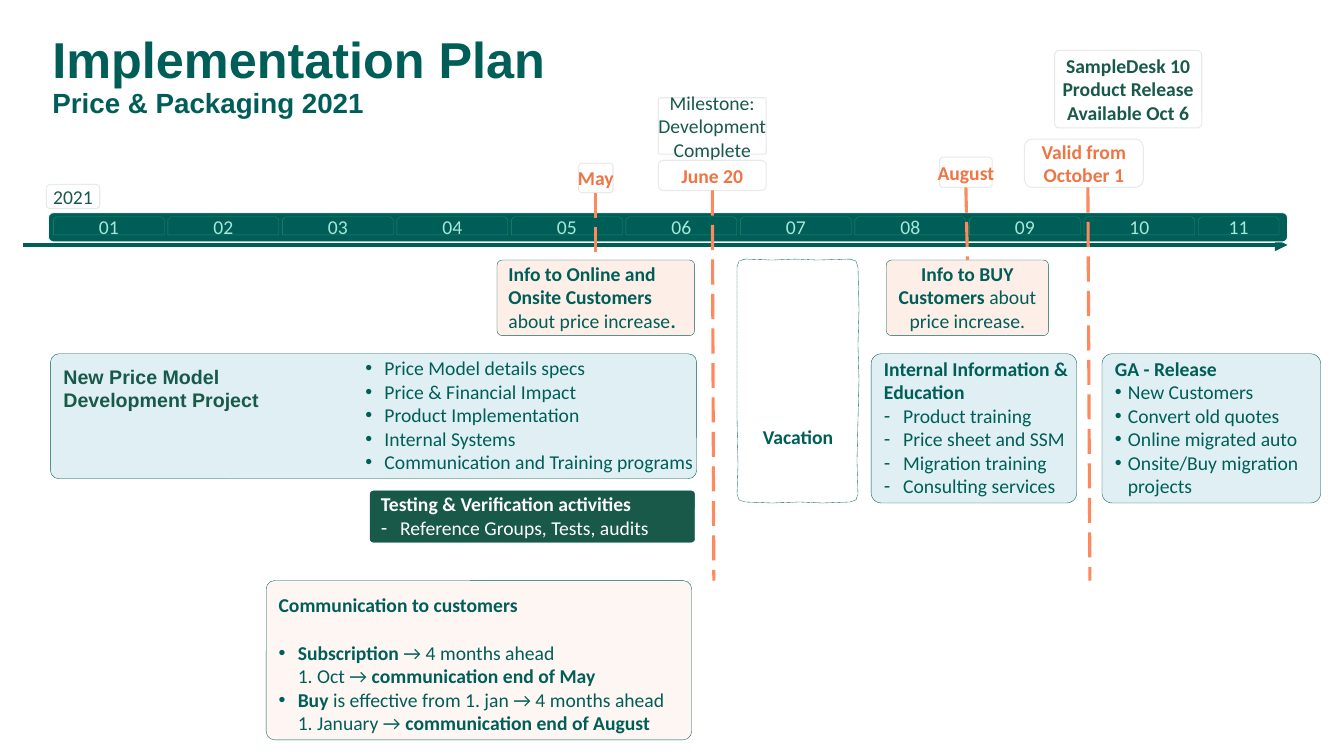
from lxml.etree import SubElement
from pptx import Presentation
from pptx.dml.color import RGBColor
from pptx.enum.dml import MSO_LINE as Dash
from pptx.enum.shapes import MSO_CONNECTOR as Link, MSO_SHAPE as Kind
from pptx.enum.text import MSO_ANCHOR as Anchor, MSO_AUTO_SIZE as Fit, PP_ALIGN as Align
from pptx.oxml.ns import qn
from pptx.util import Inches, Pt

TEAL = RGBColor(0x00, 0x5E, 0x58)
GREEN = RGBColor(0x18, 0x59, 0x4A)
MINT = RGBColor(0xA6, 0xE7, 0xD7)
EDGE = RGBColor(0x24, 0x86, 0x6E)
PALE = RGBColor(0xF1, 0xF7, 0xF5)
GREY = RGBColor(0xEA, 0xE9, 0xE9)
WHITE = RGBColor(0xFF, 0xFF, 0xFF)
BLUE = RGBColor(0xA6, 0xD3, 0xDD)
PEACH = RGBColor(0xFE, 0xD0, 0xBF)
CREAM = RGBColor(0xFE, 0xE8, 0xDF)
CORAL = RGBColor(0xFC, 0x8A, 0x5E)
ORANGE = RGBColor(0xEF, 0x75, 0x45)


def style(shape, fill, line, width, alpha=None):
    shape.shadow.inherit = False
    if fill is None:
        shape.fill.background()
    else:
        shape.fill.solid()
        shape.fill.fore_color.rgb = fill
    if alpha:
        color = shape.fill._xPr.find(qn("a:solidFill"))[0]
        SubElement(color, qn("a:alpha"), val=str(alpha * 1000))
    shape.line.color.rgb = line
    shape.line.width = Pt(width)


def bullet(para, mark, left, hang):
    props = para._p.get_or_add_pPr()
    props.set("marL", str(Inches(left)))
    props.set("indent", str(-Inches(hang)))
    SubElement(props, qn("a:buFont"), typeface="Arial")
    SubElement(props, qn("a:buChar"), char=mark)


def write(frame, items, color, bold=False, align=Align.LEFT, inset=(0, 0, 0, 0),
          wrap=True, anchor=Anchor.MIDDLE, indent=(0.19, 0.19), font="Calibri"):
    """Fill a frame; a leading mark makes a bullet, ** toggles bold."""
    frame.word_wrap = wrap
    frame.vertical_anchor = anchor
    (frame.margin_left, frame.margin_top,
     frame.margin_right, frame.margin_bottom) = map(Inches, inset)
    for num, item in enumerate(items):
        para = frame.add_paragraph() if num else frame.paragraphs[0]
        para.alignment = align
        if item[:2] in ("• ", "- "):
            bullet(para, item[0], *indent)
            item = item[2:]
        parts = item.split("**")
        para.font.name, para.font.size = font, Pt(14)
        para.font.color.rgb = color
        whole = len(parts) == 3 and not parts[0] and not parts[2]
        if len(parts) == 1 or whole:
            para.font.bold = bold or whole
        for odd, part in enumerate(parts):
            for row, text in enumerate(part.split("\n")):
                if row:
                    para.add_line_break()
                if text:
                    run = para.add_run()
                    run.text = text
                    if len(parts) > 1 and not whole:
                        run.font.bold = odd % 2 == 1


def block(slide, box, kind=Kind.ROUNDED_RECTANGLE, curve=None):
    shape = slide.shapes.add_shape(kind, *map(Inches, box))
    if curve is not None:
        shape.adjustments[0] = curve
    return shape


def label(slide, box, items, color, bold=False, curve=None):
    shape = block(slide, box, curve=curve)
    style(shape, None, GREY, 0.75)
    write(shape.text_frame, items, color, bold, Align.CENTER, wrap=False)
    return shape


def panel(slide, box, items, fill, alpha=35, color=TEAL, curve=0.068,
          inset=(0.1, 0, 0, 0), **text):
    shape = block(slide, box, curve=curve)
    style(shape, fill, TEAL, 0.25, alpha)
    write(shape.text_frame, items, color, inset=inset, anchor=Anchor.TOP, **text)
    return shape


def rule(slide, start, end, color, width):
    line = slide.shapes.add_connector(Link.STRAIGHT, *map(Inches, start + end))
    line.line.color.rgb = color
    line.line.width = Pt(width)
    SubElement(line._element.spPr, qn("a:effectLst"))
    return line


def marker(slide, start, end, top=None, foot=None):
    line = rule(slide, start, end, CORAL, 2.25)
    line.line.dash_style = Dash.LONG_DASH
    if top is not None:
        line.begin_connect(top, 2)
    if foot is not None:
        line.end_connect(foot, 0)


def heading(slide, box):
    title = slide.shapes.title
    title.left, title.top, title.width, title.height = map(Inches, box)
    frame = title.text_frame
    frame.auto_size = Fit.NONE
    frame.vertical_anchor = Anchor.MIDDLE
    para = frame.paragraphs[0]
    para.alignment, para.line_spacing = Align.LEFT, 0.9
    para.font.name, para.font.bold = "Arial", True
    para.font.color.rgb = TEAL
    for text, size in (("Implementation Plan", 36), ("Price & Packaging 2021", 19.8)):
        if para.runs:
            para.add_line_break()
        run = para.add_run()
        run.text = text
        run.font.size = Pt(size)


def timeline(slide, box):
    left, top, width, height = box
    axis = rule(slide, (0.23, top + 0.32), (left + width, top + 0.32), TEAL, 3)
    SubElement(axis.line._get_or_add_ln(), qn("a:tailEnd"), type="triangle")
    style(block(slide, box), TEAL, PALE, 0.75)
    step = (10.75 - 0.53) / 9
    for month in range(11):
        wide = 0.8 if month == 10 else 1.1
        cell = block(slide, (left + 0.05 + month * step, top + 0.04, wide, 0.18),
                     Kind.SNIP_2_SAME_RECTANGLE)
        style(cell, TEAL, EDGE, 0.25)
        write(cell.text_frame, [f"{month + 1:02}"], MINT, align=Align.CENTER, wrap=False)
    label(slide, (left - 0.02, top - 0.28, 0.53, 0.24), ["2021"], GREEN)


def vacation(slide, box):
    """Draw the slightly uneven, dashed holiday frame."""
    left, top, width, height = box
    edge = [(0, 0.08), (0.02, 0.02), (0.08, 0), (0.35, 0.01), (0.58, 0), (0.8, 0.01),
            (1.12, 0), (1.18, 0.02), (1.2, 0.08), (1.21, 0.5), (1.2, 0.85),
            (1.21, 1.2), (1.2, 1.6), (1.19, 2), (1.2, 2.33), (1.18, 2.39),
            (1.12, 2.41), (0.85, 2.42), (0.62, 2.41), (0.35, 2.42), (0.08, 2.41),
            (0.02, 2.39), (0, 2.33), (0.01, 2.05), (0, 1.58), (0, 0.83)]
    spots = [(Inches(left + x), Inches(top + y)) for x, y in edge]
    maker = slide.shapes.build_freeform(*spots[0])
    maker.add_line_segments(spots[1:], close=True)
    shape = maker.convert_to_shape()
    style(shape, WHITE, TEAL, 0.25)
    shape.line.dash_style = Dash.SQUARE_DOT
    write(shape.text_frame, ["Vacation"], TEAL, True, Align.CENTER,
          (0.1, 1.65, 0.1, 0), anchor=Anchor.TOP)


def project(slide, box):
    left, top, width, height = box
    panel(slide, box, [
        "• Price Model details specs", "• Price & Financial Impact",
        "• Product Implementation", "• Internal Systems",
        "• Communication and Training programs"], BLUE, indent=(3.19, 0.19))
    note = slide.shapes.add_textbox(*map(Inches, (left + 0.03, top + 0.06, 2.59, 0.57)))
    write(note.text_frame, ["New Price Model", "Development Project"], GREEN, True,
          inset=(0.1, 0.05, 0.1, 0.05), anchor=Anchor.TOP, font="Arial")
    panel(slide, (left + 3.17, top + 1.36, 3.22, 0.51), [
        "**Testing & Verification activities**",
        "- Reference Groups, Tests, audits"], GREEN, None, WHITE)


def release(slide, top):
    panel(slide, (8.64, top, 2.04, 1.48), [
        "**Internal Information &**", "**Education**", "- Product training",
        "- Price sheet and SSM", "- Migration training", "- Consulting services"], BLUE)
    panel(slide, (10.93, top, 2.17, 1.48), [
        "**GA - Release**", "• New Customers", "• Convert old quotes",
        "• Online migrated auto", "• Onsite/Buy migration\nprojects"],
        BLUE, indent=(0.13, 0.13))


def notice(slide, box):
    shape = panel(slide, box, [
        "**Communication to customers**",
        "• **Subscription** → 4 months ahead\n1. Oct → **communication end of May**",
        "• **Buy** is effective from 1. jan → 4 months ahead\n"
        "1. January → **communication end of August**"],
        CREAM, curve=0.053, inset=(0.1, 0.1, 0, 0.1))
    shape.text_frame.paragraphs[0].space_after = Pt(17)


def dates(slide, top, foot):
    """Place the dated labels, customer notices and markers."""
    online = panel(slide, (4.93, top, 1.96, 0.75), [
        "**Info to Online and Onsite Customers**\nabout price increase**.**"],
        PEACH, inset=(0.1, 0, 0.1, 0))
    buyers = panel(slide, (8.79, top, 1.61, 0.75), [
        "**Info to BUY Customers** about price increase."],
        PEACH, inset=(0.1, 0, 0.1, 0), align=Align.CENTER)
    label(slide, (6.53, 0.97, 1.07, 0.56), ["Milestone:\nDevelopment", "Complete"],
          GREEN, curve=0.034)
    label(slide, (10.46, 0.5, 1.46, 0.77),
          ["SampleDesk 10", "Product Release", "Available Oct 6"], GREEN, True, 0.059)
    may = label(slide, (5.74, 1.62, 0.34, 0.29), ["May"], ORANGE, True, 0.1)
    june = label(slide, (6.53, 1.59, 1.07, 0.3), ["June 20"], ORANGE, True)
    august = label(slide, (9.32, 1.56, 0.52, 0.3), ["August"], ORANGE, True, 0.1)
    label(slide, (10.16, 1.38, 1.18, 0.48), ["Valid from\nOctober 1"], ORANGE, True)
    marker(slide, (5.91, 1.91), (5.91, top), may, online)
    marker(slide, (7.07, 1.89), (7.08, foot), june)
    marker(slide, (9.58, 1.86), (9.59, top), august, buyers)
    marker(slide, (10.79, 1.86), (10.81, foot))


def main():
    deck = Presentation()
    deck.slide_width, deck.slide_height = Inches(13.33), Inches(7.5)
    slide = deck.slides.add_slide(deck.slide_layouts[5])
    heading(slide, (0.42, 0.3, 11.5, 0.93))
    timeline(slide, (0.48, 2.11, 12.29, 0.29))
    project(slide, (0.5, 3.51, 6.41, 1.24))
    vacation(slide, (7.31, 2.57, 1.21, 2.41))
    release(slide, 3.51)
    notice(slide, (2.64, 5.76, 4.22, 1.58))
    dates(slide, 2.58, 5.76)
    deck.save("out.pptx")


if __name__ == "__main__":
    main()
